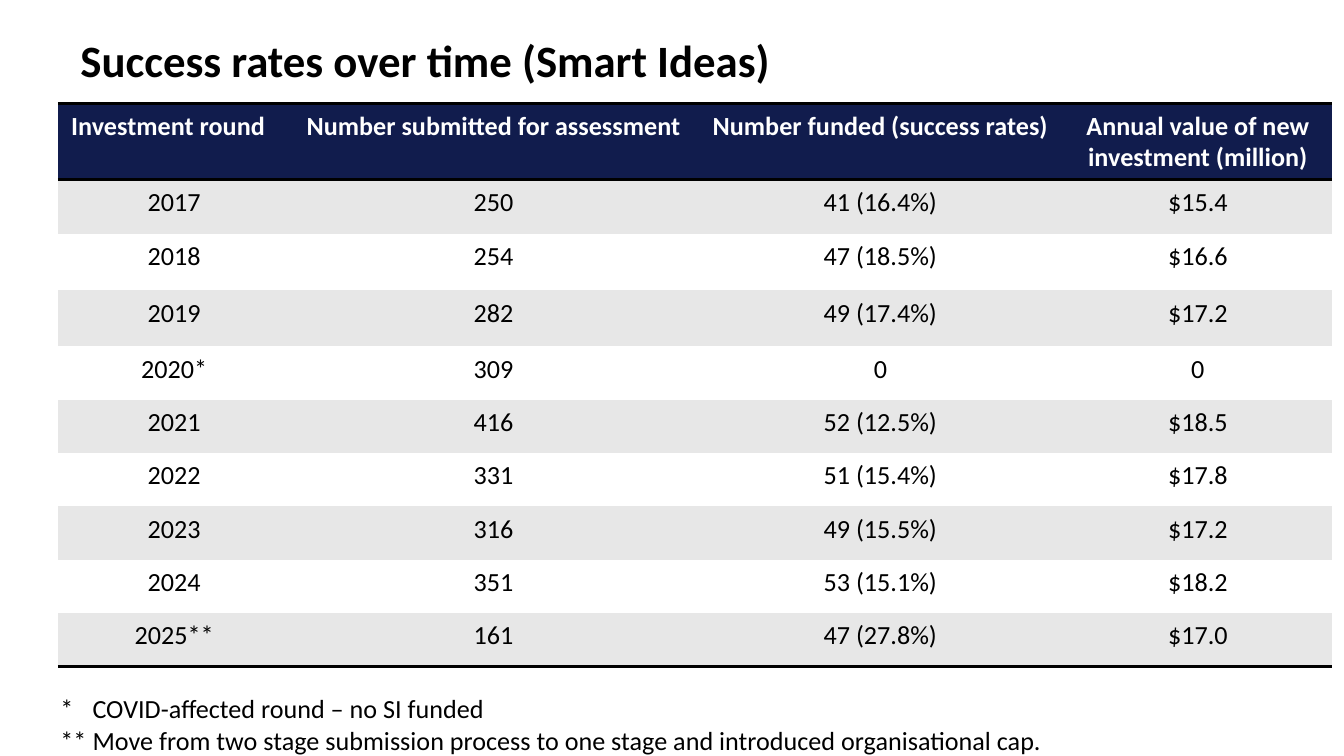
from dataclasses import dataclass

from pptx import Presentation
from pptx.dml import color
from pptx.enum import text
from pptx.oxml import xmlchemy
from pptx.util import Emu, Inches, Pt


@dataclass(frozen=True)
class Theme:
    font: str = "Calibri"
    title_size: int = 24
    body_size: int = 14
    rule_width: int = 2
    ink: str = "000000"
    paper: str = "FFFFFF"
    navy: str = "111C4D"
    band: str = "E7E7E7"


THEME = Theme()
WIDTH = 10
HEIGHT = WIDTH * 9 / 16
TITLE = "Success rates over time (Smart Ideas)"
HEADINGS = (
    "Investment round",
    "Number submitted for assessment",
    "Number funded (success rates)",
    "Annual value of new investment (million)",
)
ROUNDS = (
    ("2017", "250", "41 (16.4%)", "$15.4"),
    ("2018", "254", "47 (18.5%)", "$16.6"),
    ("2019", "282", "49 (17.4%)", "$17.2"),
    ("2020*", "309", "0", "0"),
    ("2021", "416", "52 (12.5%)", "$18.5"),
    ("2022", "331", "51 (15.4%)", "$17.8"),
    ("2023", "316", "49 (15.5%)", "$17.2"),
    ("2024", "351", "53 (15.1%)", "$18.2"),
    ("2025**", "161", "47 (27.8%)", "$17.0"),
)
COLUMN_WEIGHTS = (1.73, 3.02, 2.73, 1.99)
ROW_WEIGHTS = (0.57, 0.41, 0.42, 0.42) + (0.4,) * 6
FOOTNOTES = (
    ("*", "COVID-affected round – no SI funded"),
    ("**", "Move from two stage submission process to one stage and introduced organisational cap."),
)
FOOTNOTE_TAB = 0.24


def box(left, top, width, height):
    shares = (left / WIDTH, top / HEIGHT, width / WIDTH, height / HEIGHT)
    sides = (WIDTH, HEIGHT, WIDTH, HEIGHT)
    return tuple(Inches(share * side) for share, side in zip(shares, sides))


def add_run(paragraph, words, size, ink, bold=False):
    run = paragraph.add_run()
    run.text = words
    run.font.name = THEME.font
    run.font.size = Pt(size)
    run.font.bold = bold
    run.font.color.rgb = color.RGBColor.from_string(ink)


def add_frame(slide, area, anchor):
    frame = slide.shapes.add_textbox(*area).text_frame
    frame.word_wrap = True
    frame.vertical_anchor = anchor
    return frame


def add_title(slide, area):
    heading = add_frame(slide, area, text.MSO_ANCHOR.MIDDLE).paragraphs[0]
    heading.line_spacing = 0.9
    add_run(heading, TITLE, THEME.title_size, THEME.ink, bold=True)


def add_borders(cell, ruled):
    properties = cell._tc.get_or_add_tcPr()
    for side in ("L", "R", "T", "B"):
        edge = xmlchemy.OxmlElement(f"a:ln{side}")
        properties.append(edge)
        if side not in ruled:
            edge.append(xmlchemy.OxmlElement("a:noFill"))
            continue
        edge.set("w", str(Pt(THEME.rule_width)))
        fill = xmlchemy.OxmlElement("a:solidFill")
        ink = xmlchemy.OxmlElement("a:srgbClr")
        ink.set("val", THEME.ink)
        fill.append(ink)
        edge.append(fill)


def fill_cell(cell, words, fill, ink, bold, ruled, align):
    add_borders(cell, ruled)
    cell.fill.solid()
    cell.fill.fore_color.rgb = color.RGBColor.from_string(fill)
    paragraph = cell.text_frame.paragraphs[0]
    paragraph.alignment = align
    add_run(paragraph, words, THEME.body_size, ink, bold)


def add_rounds_table(slide, area):
    records = (HEADINGS,) + ROUNDS
    table = slide.shapes.add_table(len(records), len(HEADINGS), *area).table
    table.first_row = table.horz_banding = False
    for column, weight in zip(table.columns, COLUMN_WEIGHTS):
        column.width = Emu(int(area[2] * weight / sum(COLUMN_WEIGHTS)))
    for row, weight in zip(table.rows, ROW_WEIGHTS):
        row.height = Emu(int(area[3] * weight / sum(ROW_WEIGHTS)))

    last = len(records) - 1
    for r, record in enumerate(records):
        header = r == 0
        fill = THEME.navy if header else THEME.band if r % 2 else THEME.paper
        ink = THEME.paper if header else THEME.ink
        ruled = {0: "TB", 1: "T", last: "B"}.get(r, "")
        for c, words in enumerate(record):
            align = text.PP_ALIGN.LEFT if header and c == 0 else text.PP_ALIGN.CENTER
            fill_cell(table.cell(r, c), words, fill, ink, header, ruled, align)


def add_tab_stop(paragraph, position):
    stops = xmlchemy.OxmlElement("a:tabLst")
    stop = xmlchemy.OxmlElement("a:tab")
    stop.set("pos", str(Inches(position)))
    stop.set("algn", "l")
    stops.append(stop)
    paragraph._p.get_or_add_pPr().append(stops)


def add_footnotes(slide, area):
    frame = add_frame(slide, area, text.MSO_ANCHOR.BOTTOM)
    for i, (mark, note) in enumerate(FOOTNOTES):
        paragraph = frame.add_paragraph() if i else frame.paragraphs[0]
        add_tab_stop(paragraph, FOOTNOTE_TAB)
        add_run(paragraph, f"{mark}\t{note}", THEME.body_size, THEME.ink)


def main():
    deck = Presentation()
    deck.slide_width, deck.slide_height = Inches(WIDTH), Inches(HEIGHT)
    slide = deck.slides.add_slide(deck.slide_layouts[6])
    add_title(slide, box(0.5, 0, 9, 0.94))
    add_rounds_table(slide, box(0.43, 0.77, 9.48, 4.19))
    add_footnotes(slide, box(0.35, 4.86, 9.21, 0.81))
    deck.save("out.pptx")


if __name__ == "__main__":
    main()
